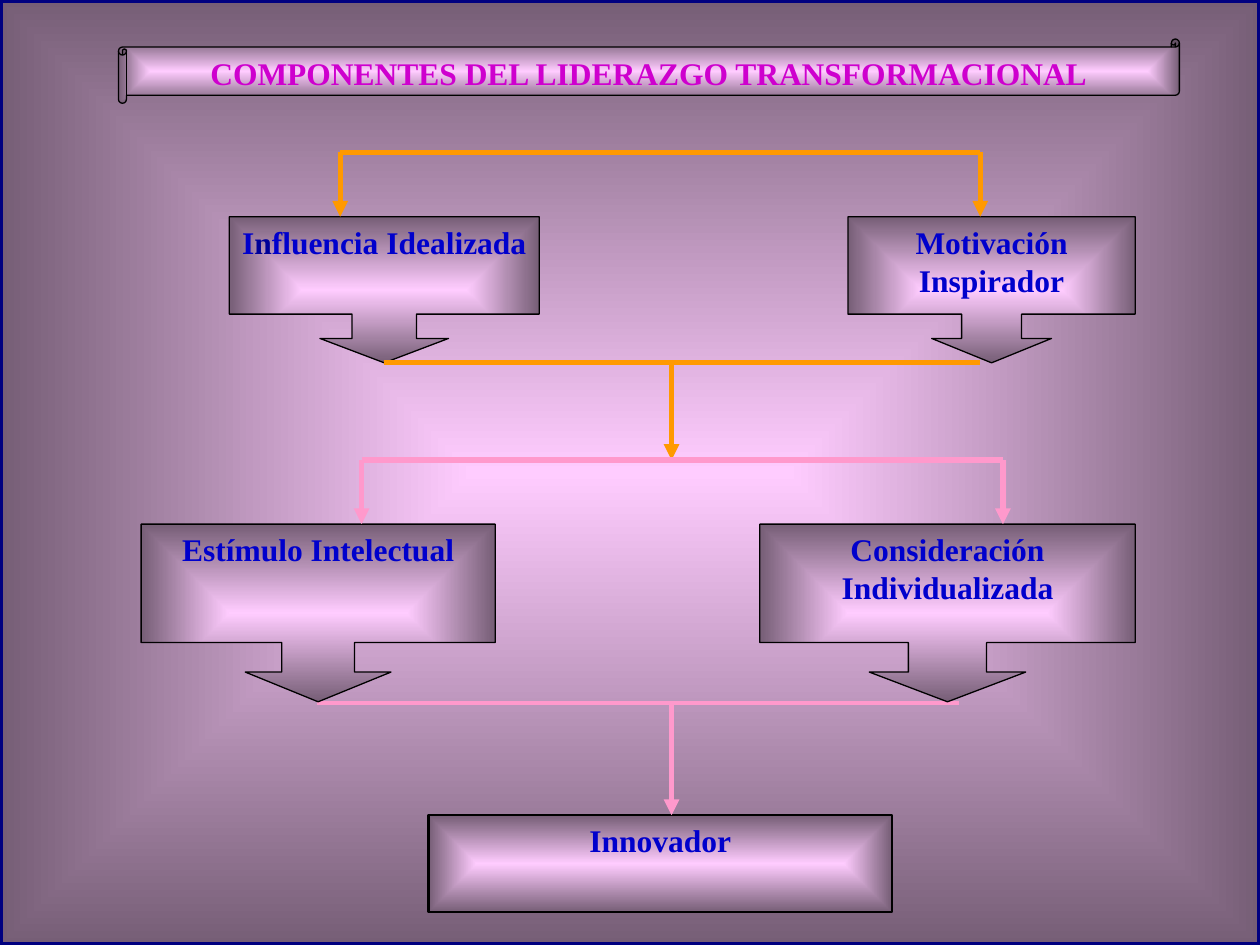
from lxml import etree
from pptx import Presentation
from pptx import util as u
from pptx.dml.color import RGBColor
from pptx.enum import shapes, text
from pptx.oxml.ns import qn

PALE = RGBColor(0xFF, 0xCC, 0xFF)
DUSK = RGBColor(0x76, 0x5E, 0x76)
NAVY = RGBColor(0x00, 0x00, 0x80)
BLACK = RGBColor(0x00, 0x00, 0x00)
MAGENTA = RGBColor(0xCE, 0x00, 0xCE)
BLUE = RGBColor(0x00, 0x00, 0xCC)
DARK_BLUE = RGBColor(0x00, 0x00, 0x99)
ORANGE = RGBColor(0xFF, 0x99, 0x00)
PINK = RGBColor(0xFF, 0x99, 0xCC)
FONT = "Times New Roman"

TOP_BAR, TOP_ROW, TOP_JOIN = 1.21, 1.72, 2.88
LOW_BAR, LOW_ROW, LOW_JOIN = 3.65, 4.16, 5.58
RESULT_TOP = 6.47
CENTER = 5.33


def glow_fill(shape):
    shape.fill.gradient()
    for stop, color in zip(shape.fill.gradient_stops, (PALE, DUSK)):
        stop.color.rgb = color
    gradient = shape._element.spPr.find(qn("a:gradFill"))
    gradient.remove(gradient.find(qn("a:lin")))
    path = etree.SubElement(gradient, qn("a:path"), path="rect")
    etree.SubElement(path, qn("a:fillToRect"), l="50000", t="50000", r="50000", b="50000")


def add_panel(page, kind, place, line_color=BLACK, line_width=0.75, adjustments=()):
    shape = page.shapes.add_shape(kind, *map(u.Inches, place))
    shape.shadow.inherit = False
    glow_fill(shape)
    shape.line.color.rgb = line_color
    shape.line.width = u.Pt(line_width)
    for index, value in enumerate(adjustments):
        shape.adjustments[index] = value
    return shape


def write_text(box, pieces, anchor=text.MSO_ANCHOR.TOP):
    frame = box.text_frame
    frame.word_wrap = True
    frame.auto_size = text.MSO_AUTO_SIZE.NONE
    frame.vertical_anchor = anchor
    frame.margin_left = frame.margin_right = u.Inches(0.05)
    para = frame.paragraphs[0]
    para.alignment = text.PP_ALIGN.CENTER
    for words, color in pieces:
        span = para.add_run()
        span.text = words
        span.font.name = FONT
        span.font.size = u.Pt(18)
        span.font.bold = True
        span.font.color.rgb = color


def add_title(page):
    add_panel(page, shapes.MSO_SHAPE.HORIZONTAL_SCROLL, (0.94, 0.31, 8.42, 0.51),
              adjustments=(0.125,))
    title = page.shapes.title
    title.left, title.top, title.width, title.height = map(u.Inches, (0.94, 0.38, 8.42, 0.39))
    write_text(title, [("COMPONENTES DEL LIDERAZGO TRANSFORMACIONAL", MAGENTA)],
               text.MSO_ANCHOR.MIDDLE)
    page.shapes._spTree.append(title._element)


def add_callout(page, place, shaft, pieces):
    callout = add_panel(page, shapes.MSO_SHAPE.DOWN_ARROW_CALLOUT, place,
                        adjustments=(shaft, shaft, 0.167, 0.667))
    write_text(callout, pieces)


def add_line(page, start, end, color, width=3, arrow=False):
    line = page.shapes.add_connector(shapes.MSO_CONNECTOR.STRAIGHT,
                                     *map(u.Inches, (*start, *end)))
    line.line.color.rgb = color
    line.line.width = u.Pt(width)
    if arrow:
        etree.SubElement(line.line._get_or_add_ln(), qn("a:tailEnd"), type="triangle")
    etree.SubElement(line._element.spPr, qn("a:effectLst"))


def add_fork(page, left, right, bar, bottom, color):
    add_line(page, (left, bar), (right, bar), color)
    for x in (left, right):
        add_line(page, (x, bar), (x, bottom), color, arrow=True)


def add_join(page, left, right, bar, bottom, color, width):
    add_line(page, (left, bar), (right, bar), color, width)
    add_line(page, (CENTER, bar), (CENTER, bottom), color, arrow=True)


def main():
    deck = Presentation()
    deck.slide_width, deck.slide_height = u.Inches(10), u.Inches(7.5)
    page = deck.slides.add_slide(deck.slide_layouts[5])
    add_panel(page, shapes.MSO_SHAPE.RECTANGLE, (0, 0, 10, 7.5), NAVY, 3)
    add_title(page)

    add_callout(page, (1.82, TOP_ROW, 2.46, 1.16), 0.44,
                [("I", BLUE), ("n", DARK_BLUE), ("fluencia Idealizada", BLUE)])
    add_callout(page, (6.73, TOP_ROW, 2.28, 1.16), 0.41, [("Motivación Inspirador", BLUE)])
    result = add_panel(page, shapes.MSO_SHAPE.RECTANGLE, (3.4, RESULT_TOP, 3.68, 0.77),
                       line_width=1.5)
    write_text(result, [("Innovador", BLUE)])

    add_join(page, 2.52, 7.61, LOW_JOIN, RESULT_TOP, PINK, 2.25)
    add_join(page, 3.05, 7.78, TOP_JOIN, LOW_BAR, ORANGE, 3)
    add_callout(page, (6.03, LOW_ROW, 2.98, 1.41), 0.44,
                [("Consideración Individualizada", BLUE)])
    add_callout(page, (1.12, LOW_ROW, 2.81, 1.41), 0.41, [("Estímulo Intelectual", BLUE)])
    add_fork(page, 2.87, 7.96, LOW_BAR, LOW_ROW, PINK)
    add_fork(page, 2.7, 7.78, TOP_BAR, TOP_ROW, ORANGE)
    deck.save("out.pptx")


if __name__ == "__main__":
    main()
